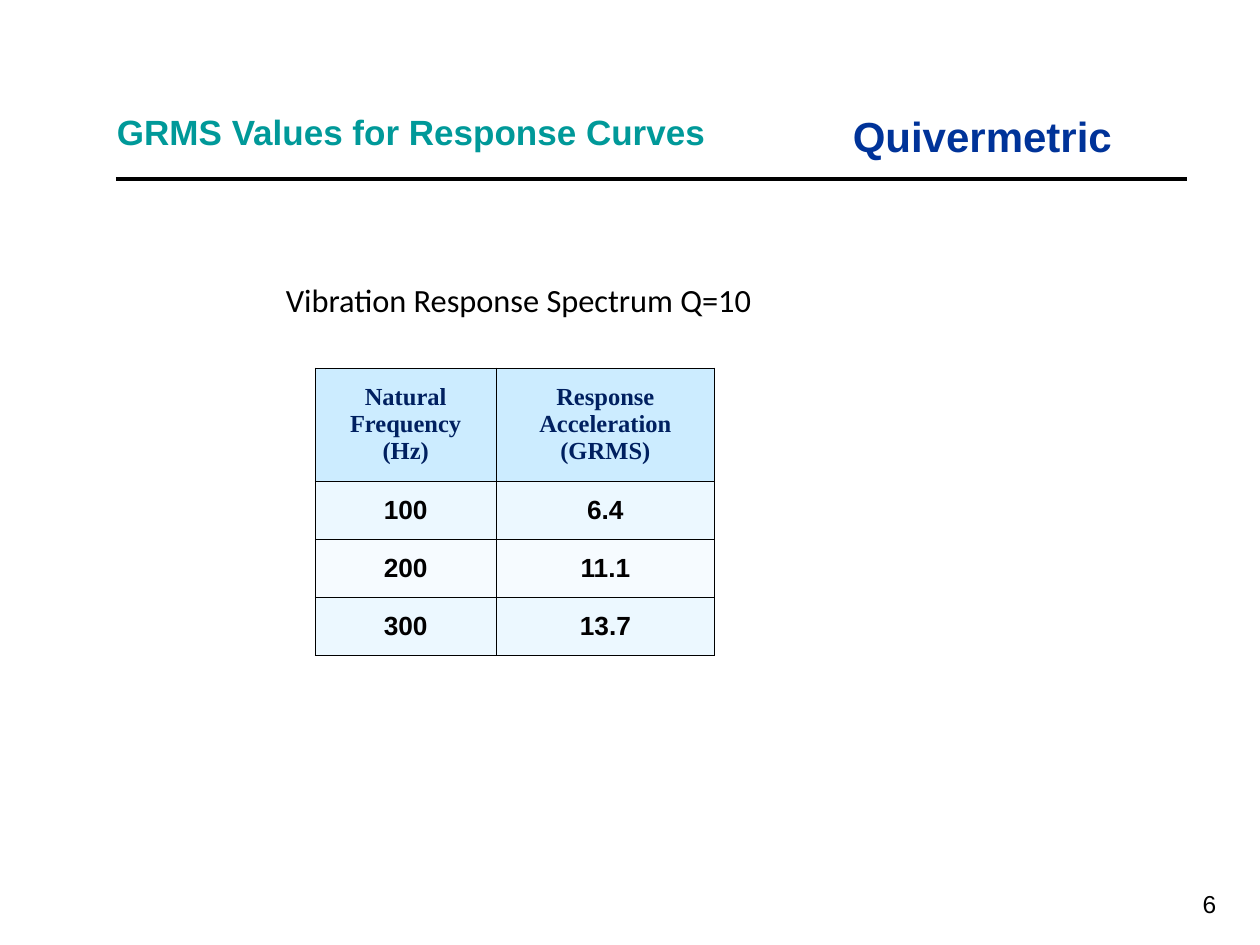
from pptx import Presentation
from pptx.dml.color import RGBColor
from pptx.enum.shapes import MSO_CONNECTOR
from pptx.enum.text import MSO_ANCHOR, PP_ALIGN
from pptx.oxml import parse_xml
from pptx.oxml.ns import nsdecls
from pptx.util import Inches, Pt

STRAIGHT = MSO_CONNECTOR.STRAIGHT
TOP, MIDDLE = MSO_ANCHOR.TOP, MSO_ANCHOR.MIDDLE
LEFT, CENTER, RIGHT = PP_ALIGN.LEFT, PP_ALIGN.CENTER, PP_ALIGN.RIGHT

THEME = {
    "title": ("Arial", 20, "009999", True),
    "brand": ("Arial", 24, "003399", True),
    "caption": ("Calibri", 18.5, "000000", False),
    "header": ("Times New Roman", 14, "002060", True),
    "value": ("Arial", 15, "010000", True),
    "number": ("Arial", 14, "010000", False),
    "rule": "000000",
    "header_fill": "CCECFF",
    "band_fills": ("ECF8FF", "F6FBFF"),
}

LABELS = [
    ("number", "6", (7.67, 6.92, 2.08, 0.5), RIGHT, MIDDLE, 1),
    ("title", "GRMS Values for Response Curves", (0.83, 0.92, 5, 0.42), LEFT, TOP, 0.7),
    ("brand", "Quivermetric", (6.67, 0.83, 2.33, 0.5), LEFT, TOP, 1),
    ("caption", "Vibration Response Spectrum Q=10", (2.17, 2.17, 4.08, 0.42), LEFT, TOP, 1),
]
RESPONSES = [
    ("Natural\nFrequency (Hz)", "Response Acceleration (GRMS)"),
    ("100", "6.4"),
    ("200", "11.1"),
    ("300", "13.7"),
]
COLUMN_WIDTHS = (1.44, 1.73)
HEADER_HEIGHT, VALUE_HEIGHT = 0.9, 0.46


def style_text(frame, role, align, spacing=1, before=0):
    family, size, color, bold = THEME[role]
    for paragraph in frame.paragraphs:
        paragraph.alignment = align
        paragraph.line_spacing = spacing
        paragraph.space_before = Pt(before)
        for run in paragraph.runs:
            run.font.name, run.font.size, run.font.bold = family, Pt(size), bold
            run.font.color.rgb = RGBColor.from_string(color)


def add_label(slide, role, text, box, align, anchor, spacing):
    frame = slide.shapes.add_textbox(*map(Inches, box)).text_frame
    frame.text = text
    frame.word_wrap = True
    frame.vertical_anchor = anchor
    style_text(frame, role, align, spacing)


def add_rule(slide):
    rule = slide.shapes.add_connector(
        STRAIGHT, Inches(0.92), Inches(1.42), Inches(9.42), Inches(1.42))
    rule.line.color.rgb = RGBColor.from_string(THEME["rule"])
    rule.line.width = Pt(2.25)
    rule._element.spPr.append(parse_xml(f'<a:effectLst {nsdecls("a")}/>'))


def add_borders(cell):
    properties = cell._tc.get_or_add_tcPr()
    for position, side in enumerate(("lnL", "lnR", "lnT", "lnB")):
        properties.insert(position, parse_xml(
            f'<a:{side} {nsdecls("a")} w="{Pt(0.25)}"><a:solidFill>'
            f'<a:srgbClr val="{THEME["rule"]}"/></a:solidFill></a:{side}>'))


def add_responses(slide):
    heights = [HEADER_HEIGHT] + [VALUE_HEIGHT] * (len(RESPONSES) - 1)
    table = slide.shapes.add_table(
        len(RESPONSES), len(COLUMN_WIDTHS), Inches(2.5), Inches(2.92),
        Inches(sum(COLUMN_WIDTHS)), Inches(sum(heights))).table
    for column, width in zip(table.columns, COLUMN_WIDTHS):
        column.width = Inches(width)
    for r, (entries, height) in enumerate(zip(RESPONSES, heights)):
        table.rows[r].height = Inches(height)
        fill = THEME["band_fills"][(r - 1) % 2] if r else THEME["header_fill"]
        for c, entry in enumerate(entries):
            cell = table.cell(r, c)
            cell.text_frame.text = entry
            cell.vertical_anchor = MIDDLE
            style_text(cell.text_frame, "value" if r else "header", CENTER,
                       before=2.25 if r else 0)
            add_borders(cell)
            cell.fill.solid()
            cell.fill.fore_color.rgb = RGBColor.from_string(fill)


def main():
    deck = Presentation()
    deck.slide_width, deck.slide_height = Inches(10), Inches(7.5)
    slide = deck.slides.add_slide(deck.slide_layouts[6])
    add_rule(slide)
    for label in LABELS:
        add_label(slide, *label)
    add_responses(slide)
    deck.save("out.pptx")


if __name__ == "__main__":
    main()
